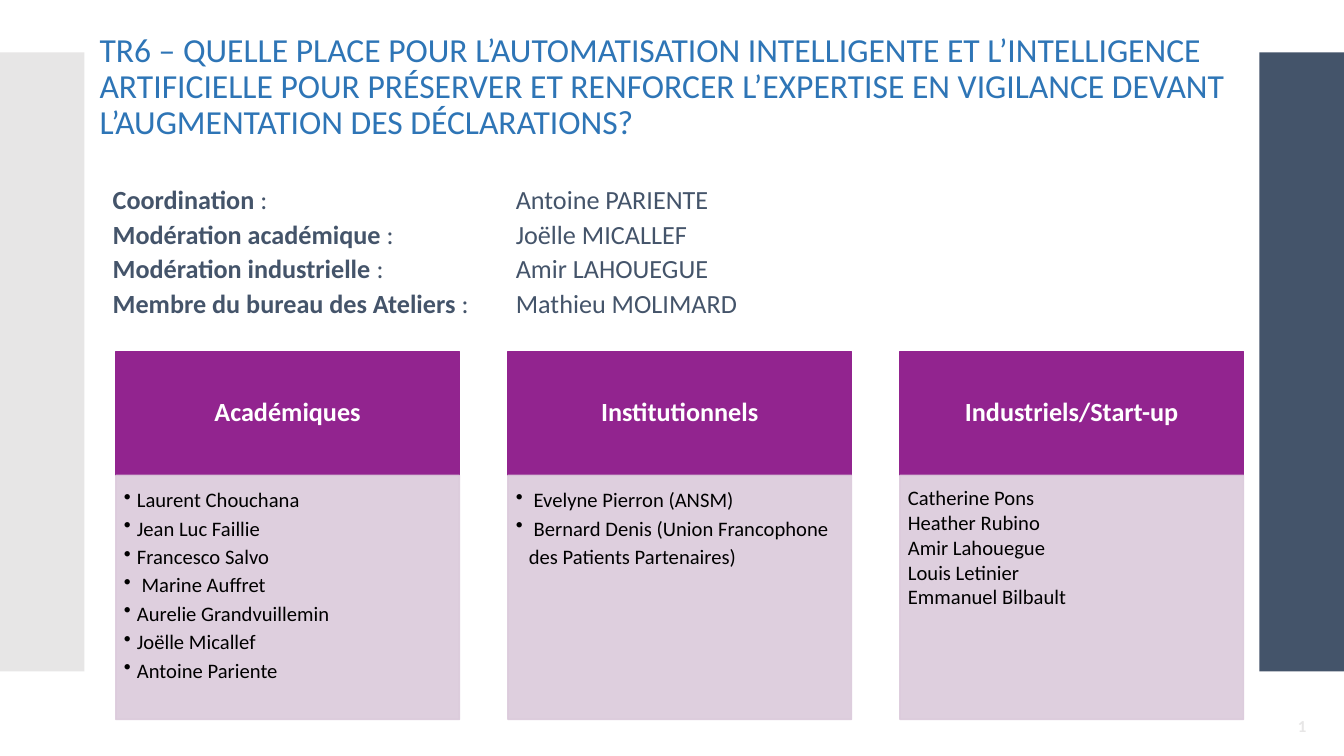
from dataclasses import dataclass

from lxml import etree
from pptx import Presentation
from pptx.dml.color import RGBColor as RGB
from pptx.enum.shapes import MSO_SHAPE as SHAPE
from pptx.enum.text import MSO_ANCHOR as ANCHOR, PP_ALIGN as ALIGN
from pptx.oxml.ns import qn
from pptx.util import Cm, Pt


@dataclass(frozen=True)
class Theme:
    """Colours, font and type sizes of the slide."""
    font: str = "Calibri"
    title: str = "2E75B6"
    slate: str = "44546A"
    grey: str = "E7E6E6"
    purple: str = "92248F"
    lilac: str = "DBCADB"
    white: str = "FFFFFF"
    black: str = "000000"
    title_size: float = 24
    head_size: float = 18.7
    body_size: float = 14.7
    number_size: float = 12


T = Theme()

TITLE = ("TR6 – QUELLE PLACE POUR L’AUTOMATISATION INTELLIGENTE ET L’INTELLIGENCE "
         "ARTIFICIELLE POUR PRÉSERVER ET RENFORCER L’EXPERTISE EN VIGILANCE DEVANT "
         "L’AUGMENTATION DES DÉCLARATIONS?")
ROLES = [
    ("Coordination", "Antoine PARIENTE"),
    ("Modération académique", "Joëlle MICALLEF"),
    ("Modération industrielle", "Amir LAHOUEGUE"),
    ("Membre du bureau des Ateliers", "Mathieu MOLIMARD"),
]
GROUPS = [
    ("Académiques", True, ["Laurent Chouchana", "Jean Luc Faillie", "Francesco Salvo",
                           " Marine Auffret", "Aurelie Grandvuillemin",
                           "Joëlle Micallef", "Antoine Pariente"]),
    ("Institutionnels", True, [" Evelyne Pierron (ANSM)",
                               " Bernard Denis (Union Francophone des Patients Partenaires)"]),
    ("Industriels/Start-up", False, ["Catherine Pons", "Heather Rubino", "Amir Lahouegue",
                                     "Louis Letinier", "Emmanuel Bilbault"]),
]


def add_run(p, text, size, color, bold=False):
    """Append a styled run to a paragraph."""
    r = p.add_run()
    r.text = text
    r.font.name, r.font.size, r.font.bold = T.font, Pt(size), bold
    r.font.color.rgb = RGB.from_string(color)
    return r


def frame(sp, insets=(0, 0, 0, 0), anchor=ANCHOR.TOP):
    """Prepare a wrapping text frame with insets in centimetres."""
    tf = sp.text_frame
    tf.word_wrap = True
    tf.vertical_anchor = anchor
    tf.margin_left, tf.margin_top, tf.margin_right, tf.margin_bottom = map(Cm, insets)
    return tf


def paragraphs(tf, items):
    """Yield a paragraph with each item, reusing the first one."""
    for i, item in enumerate(items):
        yield (tf.add_paragraph() if i else tf.paragraphs[0]), item


def text_box(s, box):
    """Add a text box at a box in centimetres."""
    return s.shapes.add_textbox(*map(Cm, box))


def rect(s, box, color, outlined=False, alpha=None):
    """Add a flat rectangle, with an optional outline and opacity."""
    sp = s.shapes.add_shape(SHAPE.RECTANGLE, *map(Cm, box))
    sp.shadow.inherit = False
    fills = [sp.fill]
    if outlined:
        sp.line.width = Pt(1)
        fills.append(sp.line.fill)
    else:
        sp.line.fill.background()
    for fill in fills:
        fill.solid()
        fill.fore_color.rgb = RGB.from_string(color)
    if alpha:
        for clr in sp._element.spPr.iter(qn("a:srgbClr")):
            etree.SubElement(clr, qn("a:alpha"), val=str(alpha * 1000))
    return sp


def add_bullet(p):
    """Give a paragraph a hanging black bullet."""
    pPr = p._p.get_or_add_pPr()
    pPr.set("marL", str(Cm(0.33)))
    pPr.set("indent", str(-Cm(0.33)))
    color = etree.SubElement(pPr, qn("a:buClr"))
    etree.SubElement(color, qn("a:srgbClr"), val=T.black)
    etree.SubElement(pPr, qn("a:buChar"), char="•")


def side_bands(s, box):
    """Draw the grey and slate bands at both ends of a box."""
    x, y, w, h = box
    band = 2.13
    rect(s, (x + w - band, y, band, h), T.slate)
    rect(s, (x, y, band, h), T.grey)


def title(s, box):
    """Write the slide title."""
    p = frame(text_box(s, box)).paragraphs[0]
    p.line_spacing = 0.9
    add_run(p, TITLE, T.title_size, T.title)


def roles(s, box):
    """List the roles with the names aligned on a tab stop."""
    tf = frame(text_box(s, box), (0.33, 0.18, 0.33, 0.18))
    for p, (role, name) in paragraphs(tf, ROLES):
        p.line_spacing = 1.1
        tabs = etree.SubElement(p._p.get_or_add_pPr(), qn("a:tabLst"))
        etree.SubElement(tabs, qn("a:tab"), pos=str(Cm(10.16)), algn="l")
        add_run(p, role, T.head_size, T.slate, True)
        add_run(p, f" :\t{name}", T.head_size, T.slate)


def card(s, box, head, bulleted, names):
    """Draw a headed card with its list of names."""
    x, y, w, h = box
    head_h = 3.12
    sp = rect(s, (x, y, w, head_h), T.purple, True)
    p = frame(sp, (0.38, 0.2, 0.38, 0.2), ANCHOR.MIDDLE).paragraphs[0]
    p.alignment = ALIGN.CENTER
    p.line_spacing = 0.9
    add_run(p, head, T.head_size, T.white, True)
    sp = rect(s, (x, y + head_h, w, h - head_h), T.lilac, True, 90)
    tf = frame(sp, (0.2, 0.2 if bulleted else 0.25, 0.25, 0.3))
    for p, name in paragraphs(tf, names):
        p.alignment = ALIGN.LEFT
        if bulleted:
            p.line_spacing = 1.15
            add_bullet(p)
        add_run(p, name, T.body_size, T.black)


def cards(s, box):
    """Spread the cards evenly across a box."""
    x, y, w, h = box
    card_w = 8.66
    pitch = (w - card_w) / (len(GROUPS) - 1)
    for i, group in enumerate(GROUPS):
        card(s, (x + i * pitch, y, card_w, h), *group)


def slide_number(s, box):
    """Add the slide number as a field."""
    p = frame(text_box(s, box), anchor=ANCHOR.MIDDLE).paragraphs[0]
    p.alignment = ALIGN.RIGHT
    r = add_run(p, "1", T.number_size, T.grey, True)._r
    field = etree.SubElement(p._p, qn("a:fld"), type="slidenum",
                             id="{B6F15528-21DE-4FAA-801E-634DDDAF4B2B}")
    field.extend(list(r))
    p._p.remove(r)


def main():
    """Build and save the slide."""
    prs = Presentation()
    prs.slide_width, prs.slide_height = Cm(33.87), Cm(19.05)
    s = prs.slides.add_slide(prs.slide_layouts[6])
    side_bands(s, (0, 1.32, 33.87, 15.6))
    title(s, (2.51, 0.84, 29.21, 2.87))
    roles(s, (2.51, 4.37, 27.25, 4.5))
    cards(s, (2.92, 8.86, 28.42, 9.27))
    slide_number(s, (30.9, 17.8, 2.02, 1))
    prs.save("out.pptx")


if __name__ == "__main__":
    main()
